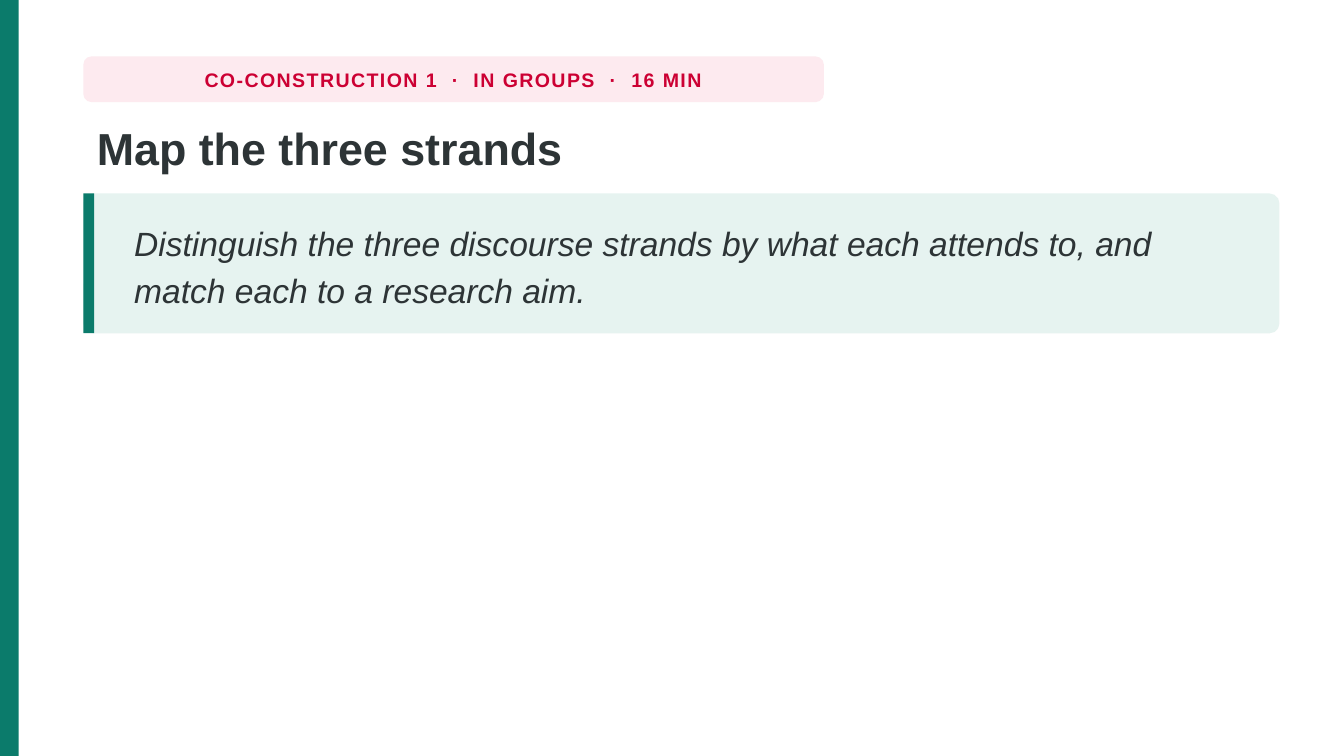
from pptx import Presentation
from pptx.dml.color import RGBColor
from pptx.enum import shapes, text
from pptx.util import Pt

GREEN, MINT = "0B7B6B", "E6F3F0"
RED, PINK = "CC0033", "FDEAEF"
INK = "2D3436"
LEFT, WIDTH = 44.64, 640.8
PANEL_TOP, PANEL_HEIGHT = 103.68, 74.88


def add_block(kind, left, top, width, height, fill):
    block = slide.shapes.add_shape(kind, Pt(left), Pt(top), Pt(width), Pt(height))
    block.shadow.inherit = False
    block.fill.solid()
    block.fill.fore_color.rgb = RGBColor.from_string(fill)
    block.line.fill.background()
    return block


def write(frame, words, size, color, align, anchor, spacing=1.0):
    """Fill a text frame with one paragraph and return its run."""
    frame.text = words
    frame.auto_size = text.MSO_AUTO_SIZE.NONE
    frame.vertical_anchor = anchor
    paragraph = frame.paragraphs[0]
    paragraph.alignment = align
    paragraph.line_spacing = spacing
    run = paragraph.runs[0]
    run.font.name = "Arial"
    run.font.size = Pt(size)
    run.font.color.rgb = RGBColor.from_string(color)
    return run


prs = Presentation()
prs.slide_width, prs.slide_height = Pt(720), Pt(405)
slide = prs.slides.add_slide(prs.slide_layouts[5])
rect = shapes.MSO_SHAPE.RECTANGLE
rounded = shapes.MSO_SHAPE.ROUNDED_RECTANGLE
align, anchor = text.PP_ALIGN, text.MSO_ANCHOR

# Green edge of the slide
add_block(rect, 0, 0, 10, 405, GREEN)

# Activity tag
activity = add_block(rounded, LEFT, 30.24, 396.72, 24.48, PINK)
activity.adjustments[0] = 0.18
activity.text_frame.word_wrap = False
activity_run = write(activity.text_frame, "CO-CONSTRUCTION 1  ·  IN GROUPS  ·  16 MIN",
                     10.5, RED, align.CENTER, anchor.MIDDLE)
activity_run.font.bold = True
activity_run.font._element.set("spc", "80")

# Title
title = slide.shapes.title
title.left, title.top, title.width, title.height = Pt(LEFT), Pt(60.48), Pt(WIDTH), Pt(40.32)
title_run = write(title.text_frame, "Map the three strands",
                  24, INK, align.LEFT, anchor.TOP, 1.02)
title_run.font.bold = True

# Goal panel with its accent bar
panel = add_block(rounded, LEFT, PANEL_TOP, WIDTH, PANEL_HEIGHT, MINT)
panel.adjustments[0] = 0.07
add_block(rect, LEFT, PANEL_TOP, 5.76, PANEL_HEIGHT, GREEN)
goal = slide.shapes.add_textbox(Pt(64.8), Pt(PANEL_TOP + 3.6), Pt(601.2), Pt(PANEL_HEIGHT - 7.2))
goal.text_frame.word_wrap = True
goal_run = write(goal.text_frame,
                 "Distinguish the three discourse strands by what each attends to, "
                 "and match each to a research aim.",
                 18, INK, align.LEFT, anchor.MIDDLE, 1.16)
goal_run.font.italic = True

prs.save("out.pptx")
